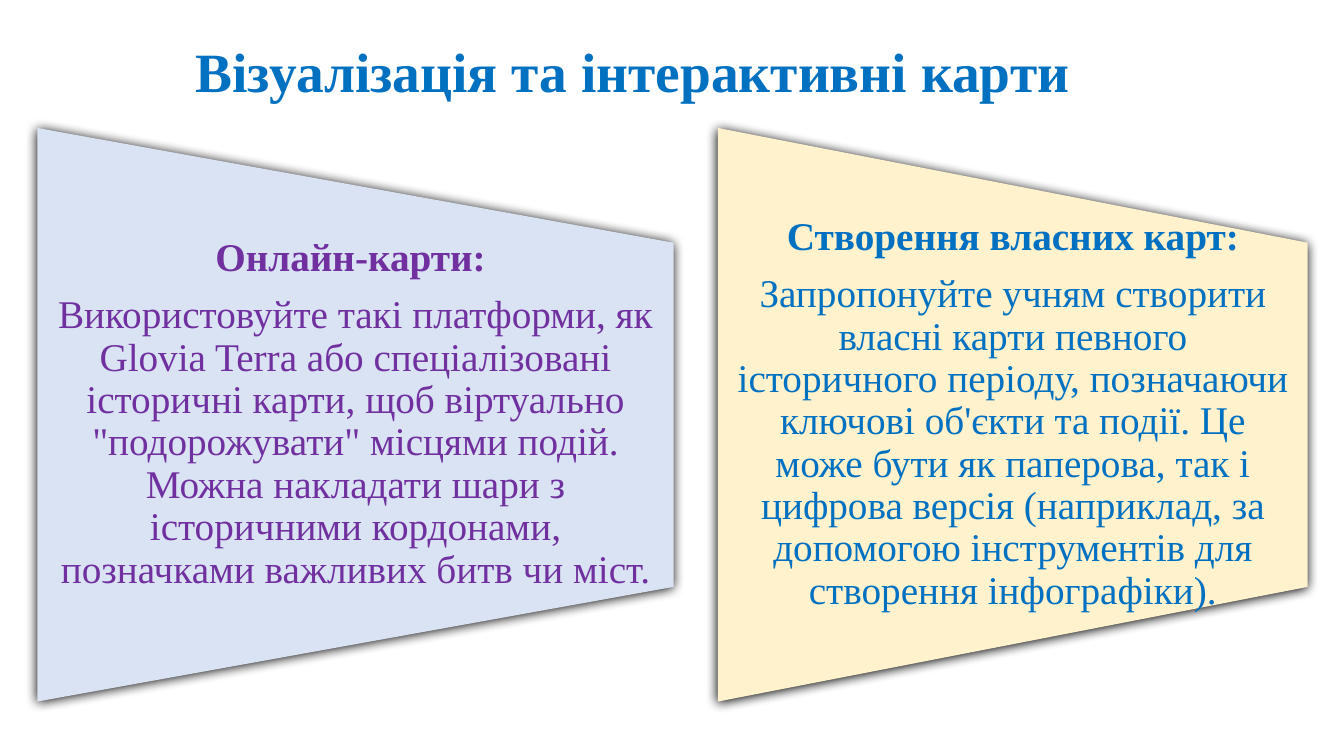
import pptx
import pptx.util
import pptx.oxml
import pptx.dml.color
import pptx.enum.shapes
import pptx.enum.text

Inch, Pt = pptx.util.Inches, pptx.util.Pt
RGB = pptx.dml.color.RGBColor.from_string
MSO = pptx.enum.shapes.MSO_SHAPE
ALIGN = pptx.enum.text.PP_ALIGN
MID = pptx.enum.text.MSO_ANCHOR.MIDDLE
FIT = pptx.enum.text.MSO_AUTO_SIZE.NONE

WIDE, HIGH = 13.33, 7.5
FACE = "Times New Roman"
COLORS = {"blue": "0070C0", "violet": "7030A0", "sky": "DAE3F3",
          "cream": "FFF2CC", "shade": "000000"}
TOP, TALL = 1.27, 5.69

# Left edge, width, fill, text colour, heading, body
PANELS = [
    (0.37, 6.31, "sky", "violet", "Онлайн-карти: ",
     "Використовуйте такі платформи, як Glovia Terra або спеціалізовані "
     "історичні карти, щоб віртуально \"подорожувати\" місцями подій. "
     "Можна накладати шари з історичними кордонами, позначками важливих "
     "битв чи міст."),
    (7.12, 5.85, "cream", "blue", "Створення власних карт:",
     "Запропонуйте учням створити власні карти певного історичного періоду, "
     "позначаючи ключові об'єкти та події. Це може бути як паперова, так і "
     "цифрова версія (наприклад, за допомогою інструментів для створення "
     "інфографіки)."),
]


def apply(item, values):
    for name, value in values.items():
        setattr(item, name, value)


def frame(shape, left, right):
    apply(shape.text_frame, {
        "word_wrap": True, "auto_size": FIT, "vertical_anchor": MID,
        "margin_left": Inch(left), "margin_right": Inch(right),
        "margin_top": 0, "margin_bottom": 0})


def write(para, text, size, color, bold, align, after=0):
    apply(para, {"alignment": align, "line_spacing": 0.9,
                 "space_before": Pt(0), "space_after": Pt(after)})
    run = para.add_run()
    run.text = text
    apply(run.font, {"name": FACE, "size": Pt(size), "bold": bold})
    run.font.color.rgb = RGB(COLORS[color])


def shade(shape):
    shape.shadow.inherit = False
    space = "http://schemas.openxmlformats.org/drawingml/2006/main"
    glow = pptx.oxml.parse_xml(
        f'<a:outerShdw xmlns:a="{space}" blurRad="{Pt(8.5)}" dist="{Pt(1)}" '
        f'dir="5400000" algn="ctr" rotWithShape="0">'
        f'<a:srgbClr val="{COLORS["shade"]}"/></a:outerShdw>')
    shape.element.spPr.find(f"{{{space}}}effectLst").append(glow)


def head(slide, left, top, width, height):
    title = slide.shapes.title
    apply(title, {"left": Inch(left), "top": Inch(top),
                  "width": Inch(width), "height": Inch(height)})
    frame(title, 0.24, 0.1)
    write(title.text_frame.paragraphs[0], "Візуалізація та інтерактивні карти",
          39.6, "blue", True, ALIGN.LEFT)


def panel(slide, left, top, width, height, fill, color, name, body):
    # Trapezoid turned on its side, so its width and height swap
    shift = (width - height) / 2
    back = slide.shapes.add_shape(
        MSO.FLOWCHART_MANUAL_OPERATION, Inch(left + shift), Inch(top - shift),
        Inch(height), Inch(width))
    back.rotation = 270
    back.fill.solid()
    back.fill.fore_color.rgb = RGB(COLORS[fill])
    back.line.fill.background()
    shade(back)

    # Text fills the middle three fifths
    label = slide.shapes.add_textbox(
        Inch(left), Inch(top + height / 5), Inch(width), Inch(height * 3 / 5))
    frame(label, 0.19, 0.19)
    text = label.text_frame
    write(text.paragraphs[0], name, 28, color, True, ALIGN.CENTER, 10.5)
    write(text.add_paragraph(), body, 28, color, False, ALIGN.CENTER)


def main():
    deck = pptx.Presentation()
    apply(deck, {"slide_width": Inch(WIDE), "slide_height": Inch(HIGH)})
    slide = deck.slides.add_slide(deck.slide_layouts[5])
    head(slide, 1.7, 0.4, 10.72, 0.67)
    for left, width, *rest in PANELS:
        panel(slide, left, TOP, width, TALL, *rest)
    deck.save("out.pptx")


if __name__ == "__main__":
    main()
